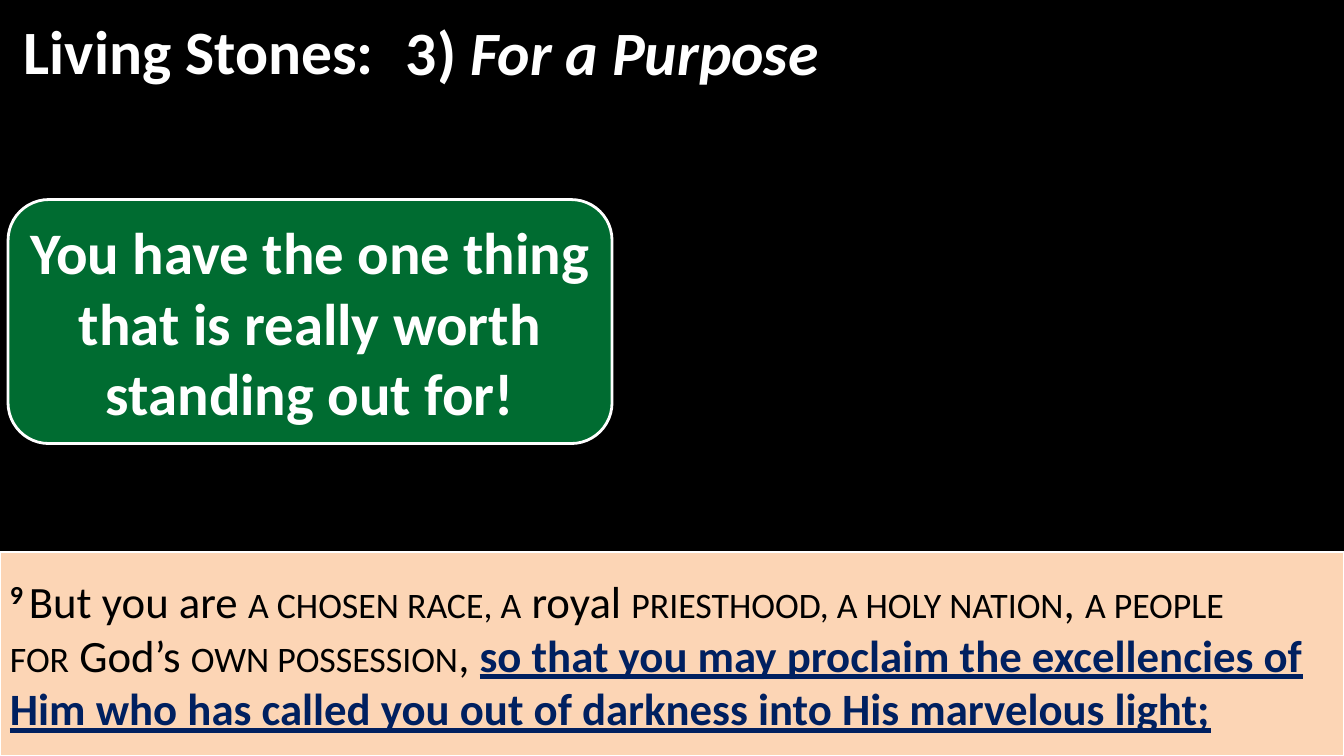
from pptx import Presentation
from pptx.dml.color import RGBColor
from pptx.enum.shapes import MSO_SHAPE as Shape
from pptx.enum.text import MSO_ANCHOR as Anchor, MSO_AUTO_SIZE as AutoSize, PP_ALIGN as Align
from pptx.oxml.ns import qn
from pptx.util import Inches, Pt
from lxml.etree import SubElement

BLACK = RGBColor(0x00, 0x00, 0x00)
WHITE = RGBColor(0xFF, 0xFF, 0xFF)
PEACH = RGBColor(0xFC, 0xD5, 0xB5)
GREEN = RGBColor(0x00, 0x6C, 0x31)
NAVY = RGBColor(0x00, 0x20, 0x60)
FONT = "Calibri"
TIE = "~"  # stands for a space that does not break

# Content: (text, font values, extra run attributes)
SMALL_CAPS = {"cap": "small"}
HEADING = {"size": Pt(44), "bold": True, "color": WHITE}
CALLOUT = {"size": Pt(42), "bold": True, "color": WHITE}
VERSE = {"size": Pt(32), "bold": False, "color": BLACK}
KEY_PHRASE = {**VERSE, "bold": True, "underline": True, "color": NAVY}

SERIES_RUNS = [("Living Stones: ", HEADING, {})]
PART_RUNS = [("3) ", HEADING, {}), ("For a Purpose", {**HEADING, "italic": True}, {})]
CALLOUT_RUNS = [("You have the one thing that is really worth standing out for!", CALLOUT, {})]
VERSE_RUNS = [
    ("9~", {**VERSE, "bold": True}, {"baseline": "30000"}),
    ("But you are~", VERSE, {}),
    ("a chosen race, a", VERSE, SMALL_CAPS),
    ("~royal~", VERSE, {}),
    ("priesthood, a~", VERSE, SMALL_CAPS),
    ("holy nation", VERSE, SMALL_CAPS),
    (",~", VERSE, {}),
    ("a people for", VERSE, SMALL_CAPS),
    ("~God’s~", VERSE, {}),
    ("own possession", VERSE, SMALL_CAPS),
    (", ", VERSE, {}),
    ("so that you may proclaim the excellencies of Him who has called you~out of "
     "darkness into His marvelous light;", KEY_PHRASE, {}),
]

# Places: left, top, width, height in inches
WIDTH, HEIGHT = 13.33, 7.5
VERSE_HEIGHT = 2.02
SERIES_BOX = (-0.04, 0, 4.17, 0.98)
PART_BOX = (3.88, 0.02, 4.45, 0.97)
VERSE_BOX = (0, HEIGHT - VERSE_HEIGHT, WIDTH, VERSE_HEIGHT)
CALLOUT_BOX = (0.08, 1.98, 5.99, 2.42)


def write(shape, runs, align):
    frame = shape.text_frame
    settings = {"word_wrap": True, "auto_size": AutoSize.NONE,
                "vertical_anchor": Anchor.MIDDLE}
    for name, value in settings.items():
        setattr(frame, name, value)
    paragraph = frame.paragraphs[0]
    paragraph.alignment = align
    for text, values, attributes in runs:
        run = paragraph.add_run()
        run.text = text.replace(TIE, chr(160))
        run.font.name = FONT
        for name, value in values.items():
            if name == "color":
                run.font.color.rgb = value
            else:
                setattr(run.font, name, value)
        for name, value in attributes.items():
            run.font._element.set(name, value)


def add_panel(slide, kind, box, fill=None, line_width=0):
    panel = slide.shapes.add_shape(kind, *map(Inches, box))
    panel.shadow.inherit = False
    if fill is None:
        panel.fill.background()
        panel.line.fill.background()
        return panel
    panel.fill.solid()
    panel.fill.fore_color.rgb = fill
    panel.line.color.rgb = WHITE
    panel.line.width = Pt(line_width)
    return panel


def main():
    presentation = Presentation()
    presentation.slide_width, presentation.slide_height = Inches(WIDTH), Inches(HEIGHT)
    slide = presentation.slides.add_slide(presentation.slide_layouts[5])
    slide.background.fill.solid()
    slide.background.fill.fore_color.rgb = BLACK

    # Heading: series name and part, both with a rounded outline
    title = slide.shapes.title
    title.left, title.top, title.width, title.height = map(Inches, SERIES_BOX)
    geometry = SubElement(title._element.spPr, qn("a:prstGeom"), prst="roundRect")
    SubElement(geometry, qn("a:avLst"))
    write(title, SERIES_RUNS, Align.CENTER)
    part = add_panel(slide, Shape.ROUNDED_RECTANGLE, PART_BOX)
    write(part, PART_RUNS, Align.LEFT)

    # Verse band along the bottom
    verse = add_panel(slide, Shape.RECTANGLE, VERSE_BOX, PEACH, 1.5)
    write(verse, VERSE_RUNS, Align.LEFT)

    # Callout
    callout = add_panel(slide, Shape.ROUNDED_RECTANGLE, CALLOUT_BOX, GREEN, 2)
    write(callout, CALLOUT_RUNS, Align.CENTER)

    presentation.save("out.pptx")


if __name__ == "__main__":
    main()
